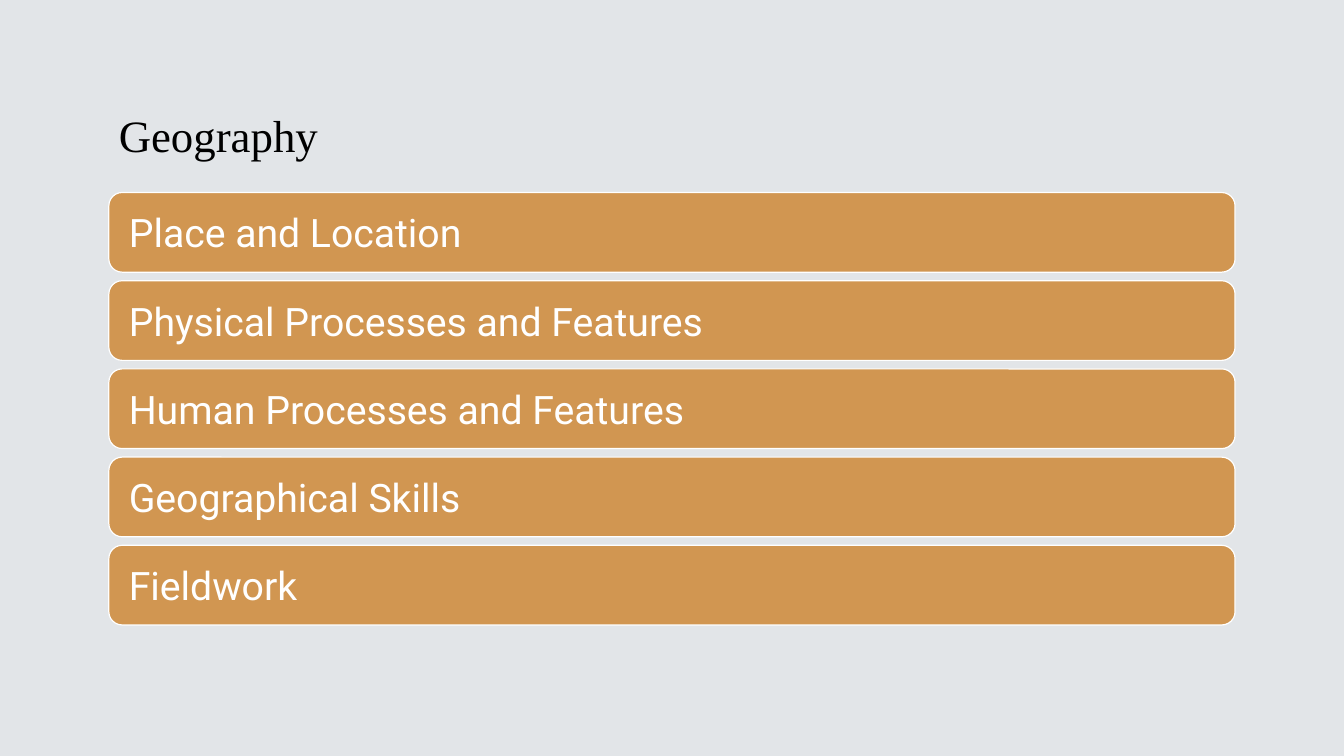
from pptx import Presentation
from pptx.dml.color import RGBColor
from pptx.enum.shapes import MSO_SHAPE
from pptx.enum.text import MSO_ANCHOR, PP_ALIGN
from pptx.util import Inches, Pt

TITLE = "Geography"
STRANDS = [
    "Place and Location",
    "Physical Processes and Features",
    "Human Processes and Features",
    "Geographical Skills",
    "Fieldwork",
]

THEME = {
    "background": RGBColor(0xE2, 0xE5, 0xE8),
    "bar": RGBColor(0xD1, 0x96, 0x51),
    "light": RGBColor(0xFF, 0xFF, 0xFF),
    "dark": RGBColor(0x00, 0x00, 0x00),
    "title_font": "Times New Roman",
    "bar_font": "Roboto",
    "title_size": Pt(32),
    "bar_size": Pt(28),
    "outline": Pt(0.85),
}

ROUNDED = MSO_SHAPE.ROUNDED_RECTANGLE
LEFT = PP_ALIGN.LEFT
BOTTOM = MSO_ANCHOR.BOTTOM
MIDDLE = MSO_ANCHOR.MIDDLE

MARGIN = Inches(1.08)
CONTENT_WIDTH = Inches(11.17)
TITLE_TOP, TITLE_HEIGHT = Inches(0.43), Inches(1.22)
FIRST_BAR_TOP, LAST_BAR_TOP = Inches(1.91), Inches(5.41)
BAR_HEIGHT = Inches(0.79)
BAR_INSET = Inches(0.16)


def write_text(shape, text, anchor, font_name, size, color):
    frame = shape.text_frame
    frame.word_wrap = True
    frame.vertical_anchor = anchor
    paragraph = frame.paragraphs[0]
    paragraph.text = text
    paragraph.alignment = LEFT
    paragraph.font.name = font_name
    paragraph.font.size = size
    paragraph.font.color.rgb = color


def add_title(slide):
    title = slide.shapes.add_textbox(MARGIN, TITLE_TOP, CONTENT_WIDTH, TITLE_HEIGHT)
    write_text(title, TITLE, BOTTOM, THEME["title_font"], THEME["title_size"], THEME["dark"])


def add_bar(slide, text, top):
    bar = slide.shapes.add_shape(ROUNDED, MARGIN, top, CONTENT_WIDTH, BAR_HEIGHT)
    bar.shadow.inherit = False
    bar.fill.solid()
    bar.fill.fore_color.rgb = THEME["bar"]
    bar.line.color.rgb = THEME["light"]
    bar.line.width = THEME["outline"]
    bar.text_frame.margin_left = bar.text_frame.margin_right = BAR_INSET
    write_text(bar, text, MIDDLE, THEME["bar_font"], THEME["bar_size"], THEME["light"])


def main():
    presentation = Presentation()
    presentation.slide_width = Inches(13.33)
    presentation.slide_height = Inches(7.5)
    slide = presentation.slides.add_slide(presentation.slide_layouts[6])
    slide.background.fill.solid()
    slide.background.fill.fore_color.rgb = THEME["background"]

    add_title(slide)
    pitch = (LAST_BAR_TOP - FIRST_BAR_TOP) // (len(STRANDS) - 1)
    for index, strand in enumerate(STRANDS):
        add_bar(slide, strand, FIRST_BAR_TOP + index * pitch)

    presentation.save("out.pptx")


if __name__ == "__main__":
    main()
